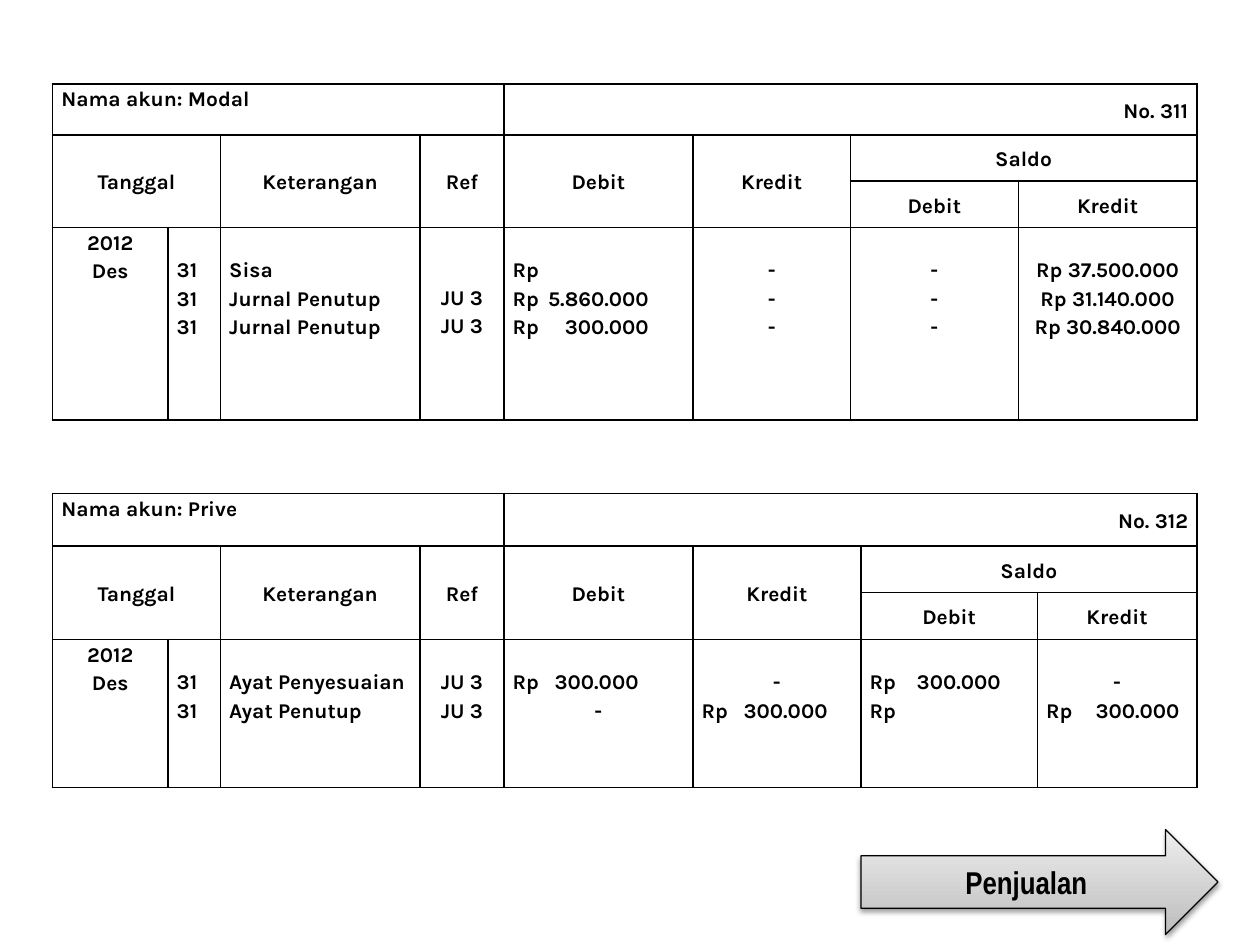
from dataclasses import dataclass

from lxml.etree import SubElement
from pptx import Presentation
from pptx.dml.color import RGBColor
from pptx.enum.shapes import MSO_SHAPE
from pptx.enum.text import MSO_ANCHOR, PP_ALIGN
from pptx.oxml.ns import qn
from pptx.util import Inches, Pt


@dataclass(frozen=True)
class Theme:
    ink: str = "000000"
    arrow_dark: str = "BDBDBD"
    arrow_light: str = "EEEEEE"
    ledger_font: str = "Karla"
    arrow_font: str = "Arial Narrow"
    ledger_size: float = 12
    arrow_size: float = 18
    rule: float = 1
    outline: float = 0.75


THEME = Theme()
INK = RGBColor.from_string(THEME.ink)
LEFT, CENTER, RIGHT = PP_ALIGN.LEFT, PP_ALIGN.CENTER, PP_ALIGN.RIGHT

# The slide is a grid of 120 columns by 90 rows of square units.
COLUMNS, ROWS = 120, 90
UNIT = Inches(10) / COLUMNS
LINE = Inches(0.22)


def grid(count):
    return round(count * UNIT)


def write(frame, text, align=LEFT, anchor=MSO_ANCHOR.TOP, size=THEME.ledger_size,
          font=THEME.ledger_font, spacing=1.15, tab=None):
    """Write one paragraph per line; dashes are centred, tab is a right stop in inches."""
    frame.vertical_anchor = anchor
    frame.word_wrap = True
    for number, line in enumerate(text.split("\n")):
        paragraph = frame.add_paragraph() if number else frame.paragraphs[0]
        paragraph.alignment = CENTER if line == "-" else align
        paragraph.line_spacing = spacing
        if tab and "\t" in line:
            stops = SubElement(paragraph._p.get_or_add_pPr(), qn("a:tabLst"))
            SubElement(stops, qn("a:tab"), pos=str(Inches(tab)), algn="r")
        run = paragraph.add_run()
        run.text = line
        run.font.name, run.font.size, run.font.bold = font, Pt(size), True
        run.font.color.rgb = INK


# Each entry column: text, blank lines above, alignment, tab stop in inches.
LEDGERS = [
    dict(name="Modal", number="311", top=8,
         widths=[11, 5, 19, 8, 18, 15, 16, 17], heights=[4.85, 4.4, 4.4, 18.35],
         entries=[
             ("2012\nDes", 0, CENTER, None),
             ("31\n31\n31", 1, LEFT, None),
             ("Sisa\nJurnal Penutup\nJurnal Penutup", 1, LEFT, None),
             ("JU 3\nJU 3", 2, CENTER, None),
             ("Rp\nRp\t5.860.000\nRp\t300.000", 1, LEFT, 1.08),
             ("-\n-\n-", 1, CENTER, None),
             ("-\n-\n-", 1, CENTER, None),
             ("Rp 37.500.000\nRp 31.140.000\nRp 30.840.000", 1, CENTER, None),
         ]),
    dict(name="Prive", number="312", top=47,
         widths=[11, 5, 19, 8, 18, 16, 16.8, 15.2], heights=[5, 4.45, 4.45, 14.1],
         entries=[
             ("2012\nDes", 0, CENTER, None),
             ("31\n31", 1, LEFT, None),
             ("Ayat Penyesuaian\nAyat Penutup", 1, LEFT, None),
             ("JU 3\nJU 3", 1, CENTER, None),
             ("Rp\t300.000\n-", 1, LEFT, 1),
             ("-\nRp\t300.000", 1, LEFT, 1),
             ("Rp\t300.000\nRp", 1, LEFT, 1.04),
             ("-\nRp\t300.000", 1, LEFT, 1.06),
         ]),
]
# Heading: first row, first column, last row, last column.
HEADINGS = [
    ("Tanggal", 1, 0, 2, 1), ("Keterangan", 1, 2, 2, 2), ("Ref", 1, 3, 2, 3),
    ("Debit", 1, 4, 2, 4), ("Kredit", 1, 5, 2, 5), ("Saldo", 1, 6, 1, 7),
    ("Debit", 2, 6, 2, 6), ("Kredit", 2, 7, 2, 7),
]

deck = Presentation()
deck.slide_width, deck.slide_height = grid(COLUMNS), grid(ROWS)
slide = deck.slides.add_slide(deck.slide_layouts[6])

for ledger in LEDGERS:
    widths, heights = ledger["widths"], ledger["heights"]
    table = slide.shapes.add_table(
        len(heights), len(widths), grid(5), grid(ledger["top"]),
        grid(sum(widths)), grid(sum(heights))).table
    table.first_row = table.horz_banding = False
    for column, width in zip(table.columns, widths):
        column.width = grid(width)
    for row, height in zip(table.rows, heights):
        row.height = grid(height)

    for cell in table.iter_cells():
        cell.margin_left = cell.margin_right = Inches(0.07)
        cell.margin_top = cell.margin_bottom = 0
        for side in ("lnL", "lnR", "lnT", "lnB"):
            border = SubElement(cell._tc.get_or_add_tcPr(), qn(f"a:{side}"),
                                w=str(Pt(THEME.rule)))
            ink = SubElement(border, qn("a:solidFill"))
            SubElement(ink, qn("a:srgbClr"), val=THEME.ink)
        cell.fill.background()

    account, number = table.cell(0, 0), table.cell(0, 4)
    account.merge(table.cell(0, 3))
    number.merge(table.cell(0, 7))
    write(account.text_frame, f"Nama akun: {ledger['name']}")
    write(number.text_frame, f"No. {ledger['number']}", align=RIGHT)
    number.vertical_anchor = MSO_ANCHOR.MIDDLE

    for heading, top, left, bottom, right in HEADINGS:
        cell = table.cell(top, left)
        if (top, left) != (bottom, right):
            cell.merge(table.cell(bottom, right))
        write(cell.text_frame, heading, align=CENTER)
        cell.vertical_anchor = MSO_ANCHOR.MIDDLE

    for index, (entry, blank_lines, align, tab) in enumerate(ledger["entries"]):
        cell = table.cell(3, index)
        cell.margin_top = blank_lines * LINE
        write(cell.text_frame, entry, align=align, tab=tab)

next_topic = slide.shapes.add_shape(
    MSO_SHAPE.RIGHT_ARROW, grid(82), grid(79), grid(34), grid(10))
next_topic.fill.gradient()
next_topic.fill.gradient_angle = 90
for stop, color in zip(next_topic.fill.gradient_stops,
                       (THEME.arrow_dark, THEME.arrow_light)):
    stop.color.rgb = RGBColor.from_string(color)
next_topic.line.color.rgb = INK
next_topic.line.width = Pt(THEME.outline)
next_topic.shadow.inherit = False
effects = next_topic._element.spPr.find(qn("a:effectLst"))
shadow = SubElement(effects, qn("a:outerShdw"), blurRad=str(Pt(3.1)),
                    dist=str(Pt(1.6)), dir="5400000", rotWithShape="0")
shade = SubElement(shadow, qn("a:srgbClr"), val=THEME.ink)
SubElement(shade, qn("a:alpha"), val="38000")
write(next_topic.text_frame, "Penjualan", align=CENTER, anchor=MSO_ANCHOR.MIDDLE,
      size=THEME.arrow_size, font=THEME.arrow_font, spacing=1.0)

deck.save("out.pptx")
